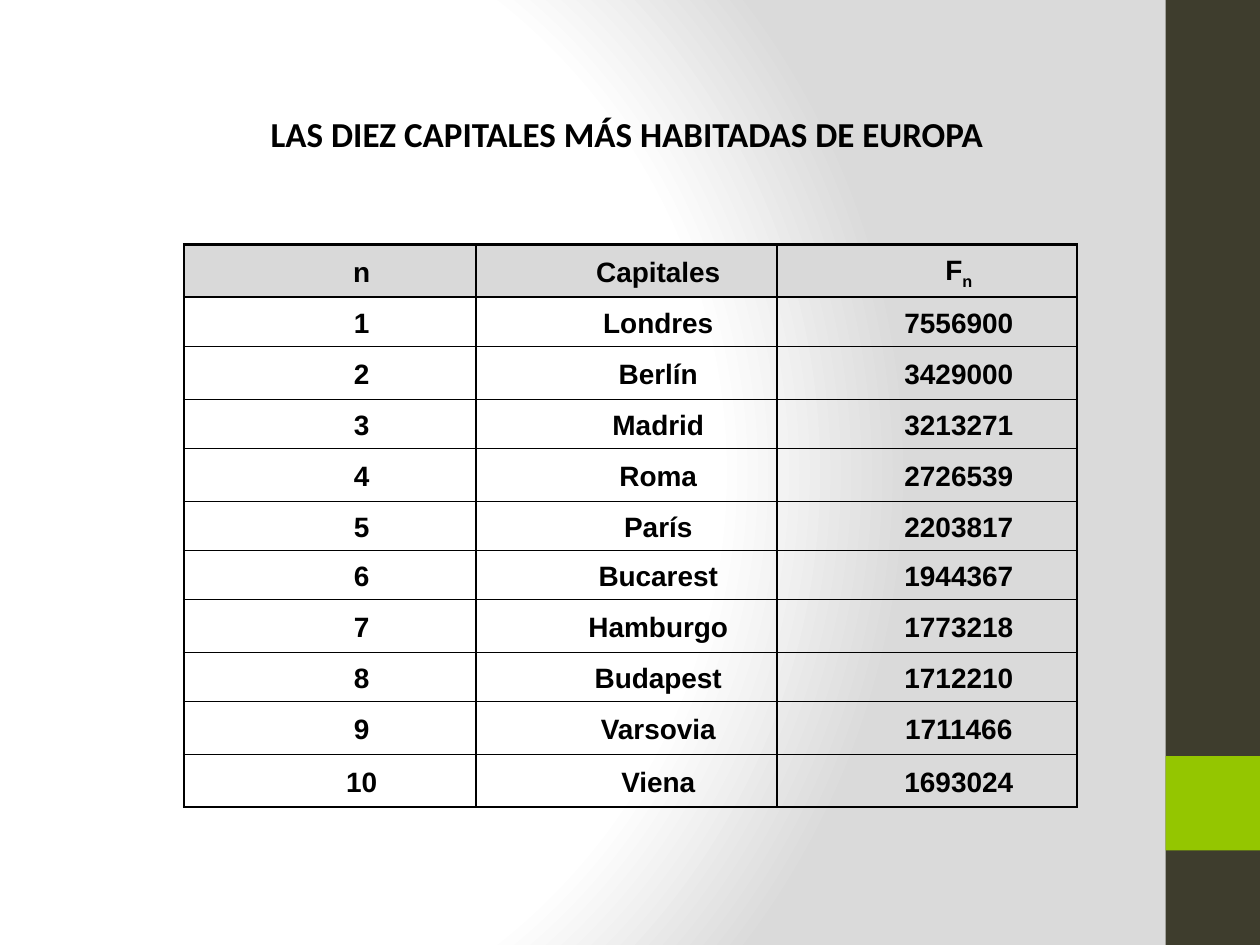
from lxml.etree import SubElement
from pptx import Presentation
from pptx.dml.color import RGBColor
from pptx.enum.shapes import MSO_SHAPE as SHAPE
from pptx.enum.text import MSO_ANCHOR as ANCHOR, PP_ALIGN as ALIGN
from pptx.oxml.ns import qn
from pptx.util import Inches, Pt

BLACK = "000000"
HEADER_FILL = "D9D9D9"
HEADER = ("n", "Capitales", "F")
CAPITALS = [
    ("Londres", "7556900"),
    ("Berlín", "3429000"),
    ("Madrid", "3213271"),
    ("Roma", "2726539"),
    ("París", "2203817"),
    ("Bucarest", "1944367"),
    ("Hamburgo", "1773218"),
    ("Budapest", "1712210"),
    ("Varsovia", "1711466"),
    ("Viena", "1693024"),
]
COL_WIDTHS = (2.32, 2.39, 2.38)
ROW_HEIGHTS = (0.42, 0.39, 0.42, 0.39, 0.42, 0.39, 0.39, 0.42, 0.39, 0.42, 0.42)


def rgb(value):
    """Turn a hex string into a colour."""
    return RGBColor.from_string(value)


def add_run(p, text, size=16, font="Arial", color=BLACK, bold=True, baseline=None):
    """Add a formatted run to a paragraph."""
    r = p.add_run()
    r.text = text
    r.font.size = Pt(size)
    r.font.name = font
    r.font.bold = bold
    r.font.color.rgb = rgb(color)
    if baseline is not None:
        r.font._element.set("baseline", str(baseline * 1000))


def set_background(slide):
    """Give the slide a radial gradient from white to grey."""
    slide.background.fill.gradient()
    grad = slide._element.find(".//" + qn("a:gradFill"))
    for child in list(grad):
        grad.remove(child)
    stops = SubElement(grad, qn("a:gsLst"))
    for pos, color in ((0, "FFFFFF"), (75, "FFFFFF"), (100, "DADADA")):
        stop = SubElement(stops, qn("a:gs"), pos=str(pos * 1000))
        SubElement(stop, qn("a:srgbClr"), val=color)
    circle = SubElement(grad, qn("a:path"), path="circle")
    SubElement(circle, qn("a:fillToRect"), l="20000", t="50000", r="100000", b="50000")


def add_block(slide, left, top, width, height, color):
    """Add a plain filled rectangle."""
    sp = slide.shapes.add_shape(
        SHAPE.RECTANGLE, Inches(left), Inches(top), Inches(width), Inches(height))
    sp.shadow.inherit = False
    sp.fill.solid()
    sp.fill.fore_color.rgb = rgb(color)
    sp.line.fill.background()


def add_title(slide, text):
    """Add the heading above the table."""
    box = slide.shapes.add_textbox(Inches(2.05), Inches(0.84), Inches(6.26), Inches(0.74))
    tf = box.text_frame
    tf.word_wrap = True
    tf.vertical_anchor = ANCHOR.TOP
    add_run(tf.paragraphs[0], text, size=20, font="Calibri")


def set_borders(cell, top, bottom):
    """Draw the four black borders of a cell, the sides at 1.5 points."""
    tc_pr = cell._tc.get_or_add_tcPr()
    for side, width in (("L", 1.5), ("R", 1.5), ("T", top), ("B", bottom)):
        ln = SubElement(tc_pr, qn("a:ln" + side), w=str(Pt(width)))
        fill = SubElement(ln, qn("a:solidFill"))
        SubElement(fill, qn("a:srgbClr"), val=BLACK)


def format_cell(cell, text, fill=None, subscript=None):
    """Write centred, indented text in a cell and set its fill."""
    cell.vertical_anchor = ANCHOR.MIDDLE
    cell.margin_left = cell.margin_right = Inches(0.07)
    cell.margin_top = cell.margin_bottom = 0
    p = cell.text_frame.paragraphs[0]
    p.alignment = ALIGN.CENTER
    p.line_spacing = 1.15
    p_pr = p._p.get_or_add_pPr()
    p_pr.set("marL", str(Inches(0.5)))
    p_pr.set("indent", "0")
    add_run(p, text)
    if subscript:
        add_run(p, subscript, baseline=-25)
    if fill:
        cell.fill.solid()
        cell.fill.fore_color.rgb = rgb(fill)
    else:
        cell.fill.background()


def add_capitals_table(slide):
    """Add the table of numbered capitals and their populations."""
    rows = [HEADER] + [(str(n), *capital) for n, capital in enumerate(CAPITALS, 1)]
    table = slide.shapes.add_table(
        len(rows), len(HEADER), Inches(1.46), Inches(1.94),
        Inches(sum(COL_WIDTHS)), Inches(sum(ROW_HEIGHTS))).table
    table.first_row = table.horz_banding = False
    for column, width in zip(table.columns, COL_WIDTHS):
        column.width = Inches(width)
    last = len(rows) - 1
    for i, (values, height) in enumerate(zip(rows, ROW_HEIGHTS)):
        table.rows[i].height = Inches(height)
        for j, value in enumerate(values):
            cell = table.cell(i, j)
            set_borders(cell, top=1.5 if i < 2 else 1, bottom=1.5 if i in (0, last) else 1)
            format_cell(cell, value, fill=HEADER_FILL if i == 0 else None,
                        subscript="n" if value == "F" else None)


def main():
    """Build and save the slide."""
    prs = Presentation()
    prs.slide_width, prs.slide_height = Inches(10), Inches(7.5)
    slide = prs.slides.add_slide(prs.slide_layouts[6])
    set_background(slide)
    add_block(slide, 9.25, 0, 0.75, 7.5, "3E3D2D")
    add_block(slide, 9.25, 6, 0.75, 0.75, "94C600")
    add_title(slide, "LAS DIEZ CAPITALES MÁS HABITADAS DE EUROPA")
    add_capitals_table(slide)
    prs.save("out.pptx")


if __name__ == "__main__":
    main()
